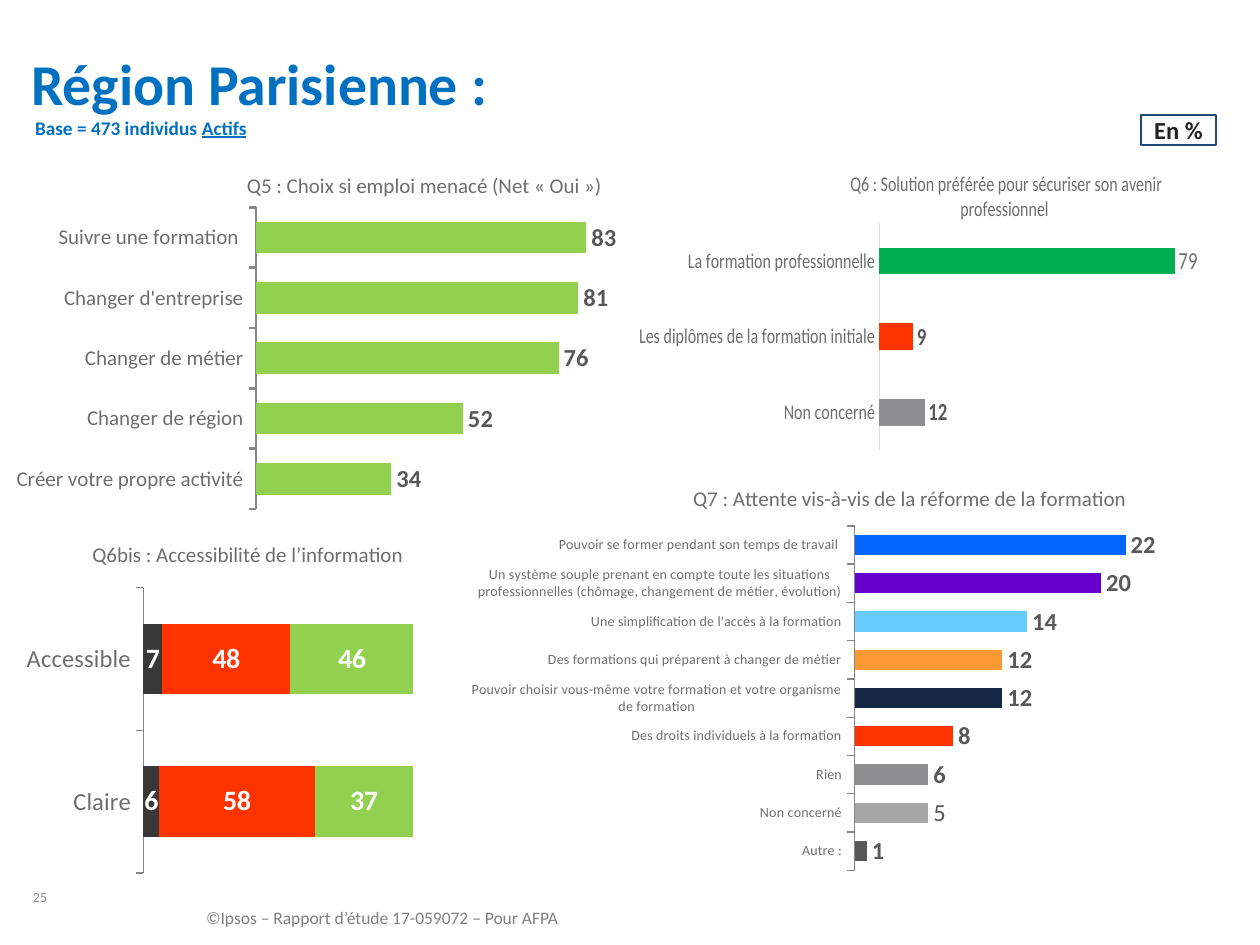
from dataclasses import dataclass, field
from typing import Optional

from lxml import etree
from pptx import Presentation
from pptx import util as u
from pptx.chart.data import CategoryChartData
from pptx.dml.color import RGBColor
from pptx.enum import chart as ch, shapes, text
from pptx.oxml.ns import qn

PX = 914400 / 126


@dataclass(frozen=True)
class Theme:
    font: str = "Calibri"
    blue: str = "0070C0"
    navy: str = "1F497D"
    ink: str = "222223"
    label: str = "58585B"
    muted: str = "6E6E71"
    page: str = "888B8D"
    footer: str = "808080"
    axis: str = "868686"
    pale: str = "DDDDDE"
    white: str = "FFFFFF"
    green: str = "92D050"
    deep_green: str = "00B050"
    red: str = "FF3300"
    charcoal: str = "383839"
    grey: str = "8F8F92"
    light_grey: str = "A6A6A6"
    headline: int = 33
    stacked: int = 16
    value: int = 14
    body: int = 12
    base: int = 11
    small: int = 10
    tiny: int = 8


T = Theme()


@dataclass
class BarPanel:
    title: str
    box: tuple
    plot: tuple
    categories: list
    series: list
    colors: list
    gap: int
    maximum: float
    title_at: Optional[tuple] = None
    points: dict = field(default_factory=dict)
    replaced_label: Optional[tuple] = None
    stacked: bool = False
    category_size: int = T.body
    category_color: str = T.muted
    axis_color: str = T.axis
    axis_width: float = 0.75
    ticks: bool = True


PANELS = [
    BarPanel(
        "Q6 : Solution préférée pour sécuriser son avenir professionnel ",
        (639, 152, 595, 339), (0.22, 0.21, 0.75, 0.67),
        ["Non concerné", "Les diplômes de la formation initiale", "La formation professionnelle"],
        [[12, 9, 78]], [T.grey], 182, 90,
        points={1: T.red, 2: T.deep_green}, replaced_label=(2, "79", T.muted),
        axis_color=T.pale, ticks=False),
    BarPanel(
        "Q5 : Choix si emploi menacé (Net «\u00a0Oui\u00a0»)",
        (0, 156, 640, 368), (0.4, 0.14, 0.56, 0.82),
        ["Créer votre propre activité", "Changer de région", "Changer de métier",
         "Changer d'entreprise", "Suivre une formation "],
        [[34, 52, 76, 81, 83]], [T.green], 90, 90, title_at=(0.38, 0.03), axis_width=1.5),
    BarPanel(
        "Q6bis : Accessibilité de l’information",
        (0, 529, 422, 391), (0.34, 0.15, 0.64, 0.73),
        ["Claire", "Accessible"], [[6, 7], [58, 48], [37, 46]],
        [T.charcoal, T.red, T.green], 102, 1, title_at=(0.21, 0.02),
        stacked=True, category_size=T.value),
    BarPanel(
        "Q7 : Attente vis-à-vis de la réforme de la formation",
        (469, 472, 787, 415), (0.49, 0.13, 0.47, 0.83),
        ["Autre :", "Non concerné", "Rien", "Des droits individuels à la formation",
         "Pouvoir choisir vous-même votre formation et votre organisme de formation",
         "Des formations qui préparent à changer de métier",
         "Une simplification de l'accès à la formation",
         "Un système souple prenant en compte toute les situations professionnelles "
         "(chômage, changement de métier, évolution)",
         "Pouvoir se former pendant son temps de travail "],
        [[1, 6, 6, 8, 12, 12, 14, 20, 22]], [T.light_grey], 90, 30, title_at=(0.28, 0.02),
        points={0: T.label, 2: T.grey, 3: T.red, 4: "142846", 5: "FF9933",
                6: "66CCFF", 7: "6600CC", 8: "0066FF"},
        replaced_label=(1, "5", T.label), category_size=T.tiny),
]


def px(*lengths: int) -> list:
    """Turn pixel lengths into EMU."""
    return [u.Emu(round(length * PX)) for length in lengths]


def style(font, size: float, color: str, bold: bool = False, underline: bool = False) -> None:
    """Format a font with the theme typeface."""
    font.name, font.size, font.bold = T.font, u.Pt(size), bold
    font.color.rgb = RGBColor.from_string(color)
    if underline:
        font.underline = True


def write(paragraph, words: str, **look) -> None:
    """Add a formatted run to a paragraph."""
    run = paragraph.add_run()
    run.text = words
    style(run.font, **look)


def prepare(frame, anchor=text.MSO_ANCHOR.TOP, wrap: bool = True):
    """Clear the margins of a text frame and return its first paragraph."""
    frame.margin_left = frame.margin_top = frame.margin_right = frame.margin_bottom = 0
    frame.vertical_anchor, frame.word_wrap = anchor, wrap
    return frame.paragraphs[0]


def place(parent, index: int, fractions: tuple, inner: bool = False) -> None:
    """Give a chart part a manual layout in fractions of the chart."""
    for old in parent.findall(qn("c:layout")):
        parent.remove(old)
    layout = etree.Element(qn("c:layout"))
    manual = etree.SubElement(layout, qn("c:manualLayout"))
    settings = [("layoutTarget", "inner")] if inner else []
    settings += [("xMode", "edge"), ("yMode", "edge"), *zip("xywh", fractions)]
    for tag, value in settings:
        etree.SubElement(manual, qn(f"c:{tag}")).set("val", str(value))
    parent.insert(index, layout)


def draw_axes(chart, panel: BarPanel) -> None:
    """Format the category axis and hide the value axis."""
    answers, scale = chart.category_axis, chart.value_axis
    style(answers.tick_labels.font, panel.category_size, panel.category_color)
    answers.format.line.color.rgb = RGBColor.from_string(panel.axis_color)
    answers.format.line.width = u.Pt(panel.axis_width)
    answers.major_tick_mark = ch.XL_TICK_MARK.OUTSIDE if panel.ticks else ch.XL_TICK_MARK.NONE
    answers.has_major_gridlines = scale.has_major_gridlines = False
    scale.minimum_scale, scale.maximum_scale = 0, panel.maximum
    scale.visible = False


def draw_series(series, panel: BarPanel, color: str) -> None:
    """Colour a series and its points and show its values."""
    series.format.fill.solid()
    series.format.fill.fore_color.rgb = RGBColor.from_string(color)
    series.invert_if_negative = False
    for index, point_color in panel.points.items():
        fill = series.points[index].format.fill
        fill.solid()
        fill.fore_color.rgb = RGBColor.from_string(point_color)
    labels = series.data_labels
    labels.show_value = True
    if panel.stacked:
        style(labels.font, T.stacked, T.white, bold=True)
    else:
        style(labels.font, T.value, T.label, bold=True)
        labels.position = ch.XL_LABEL_POSITION.OUTSIDE_END
    if panel.replaced_label:
        index, words, label_color = panel.replaced_label
        label = series.points[index].data_label
        write(label.text_frame.paragraphs[0], words, size=T.value, color=label_color)
        label.position = ch.XL_LABEL_POSITION.OUTSIDE_END


def draw_panel(slide, panel: BarPanel) -> None:
    """Draw one bar chart with its title."""
    data = CategoryChartData()
    data.categories = panel.categories
    for number, values in enumerate(panel.series, 1):
        data.add_series(f"Series {number}", values)
    kind = ch.XL_CHART_TYPE.BAR_STACKED_100 if panel.stacked else ch.XL_CHART_TYPE.BAR_CLUSTERED
    chart = slide.shapes.add_chart(kind, *px(*panel.box), data).chart
    style(chart.font, T.small, T.ink)
    chart.has_legend, chart.has_title = False, True
    heading = chart.chart_title
    write(heading.text_frame.paragraphs[0], panel.title, size=T.body, color=T.muted)
    heading.include_in_layout = False
    if panel.title_at:
        place(heading._element, 1, panel.title_at)
    bars = chart.plots[0]
    place(bars._element.getparent(), 0, panel.plot, inner=True)
    bars.gap_width, bars.vary_by_categories = panel.gap, False
    draw_axes(chart, panel)
    for series, color in zip(bars.series, panel.colors):
        draw_series(series, panel, color)


def main() -> None:
    """Build and save the slide."""
    deck = Presentation()
    deck.slide_width, deck.slide_height = px(1260, 945)
    slide = deck.slides.add_slide(deck.slide_layouts[5])

    title = slide.shapes.title
    title.left, title.top, title.width, title.height = px(31, 55, 1192, 63)
    region = prepare(title.text_frame, text.MSO_ANCHOR.MIDDLE)
    region.alignment, region.line_spacing = text.PP_ALIGN.LEFT, 0.9
    write(region, "Région Parisienne :", size=T.headline, color=T.blue, bold=True)

    for panel in PANELS:
        draw_panel(slide, panel)

    base = prepare(slide.shapes.add_textbox(*px(35, 116, 307, 47)).text_frame)
    write(base, "Base = 473 individus ", size=T.base, color=T.blue, bold=True)
    write(base, "Actifs", size=T.base, color=T.blue, bold=True, underline=True)

    page = prepare(slide.shapes.add_textbox(*px(33, 861, 43, 44)).text_frame,
                   text.MSO_ANCHOR.BOTTOM, wrap=False)
    write(page, "25", size=T.tiny, color=T.page)

    footer = prepare(slide.shapes.add_textbox(*px(206, 907, 648, 82)).text_frame)
    write(footer, "©Ipsos – Rapport d’étude 17-059072 – Pour AFPA", size=T.small, color=T.footer)

    unit = slide.shapes.add_shape(shapes.MSO_SHAPE.RECTANGLE, *px(1141, 115, 75, 30))
    unit.shadow.inherit = False
    unit.fill.background()
    unit.line.color.rgb, unit.line.width = RGBColor.from_string(T.navy), u.Pt(1.5)
    percent = prepare(unit.text_frame, text.MSO_ANCHOR.MIDDLE)
    percent.alignment = text.PP_ALIGN.CENTER
    write(percent, "En %", size=T.value, color=T.ink, bold=True)

    deck.save("out.pptx")


if __name__ == "__main__":
    main()
